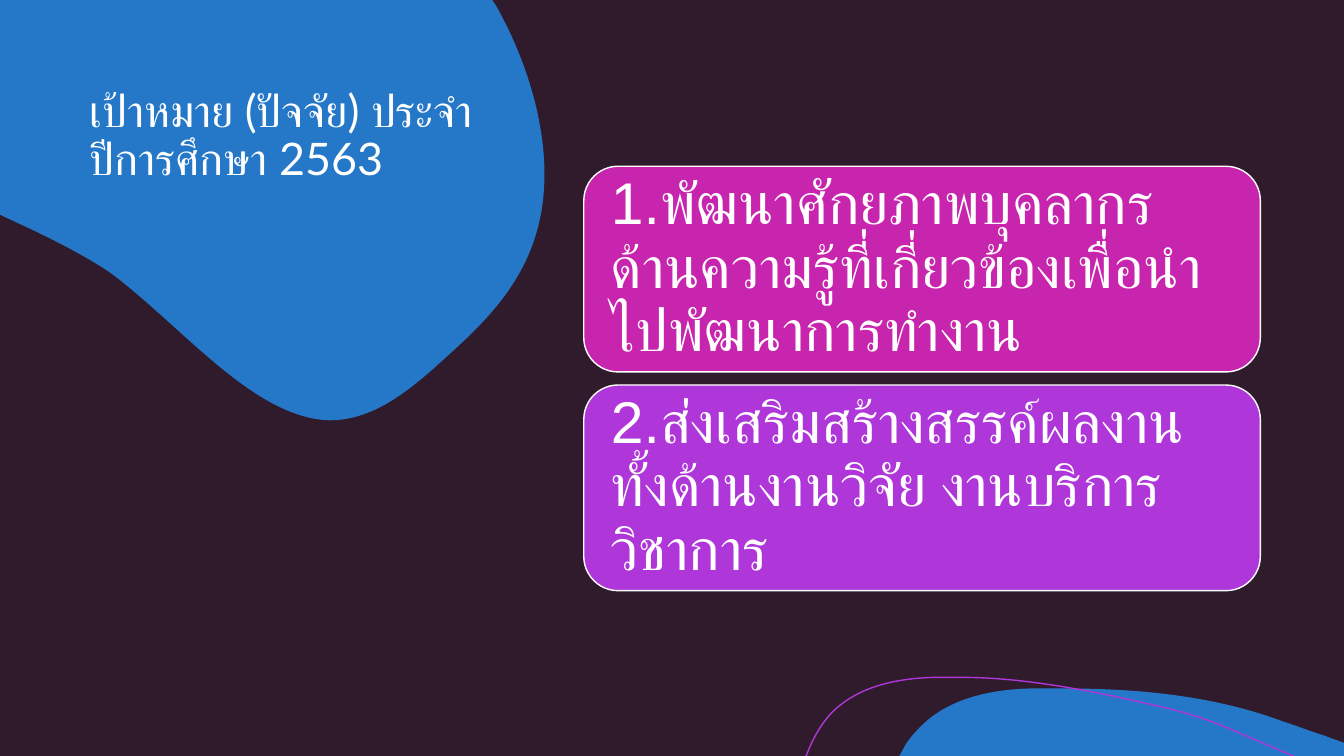
from lxml import etree
from pptx import Presentation
from pptx.dml.color import RGBColor
from pptx.enum.shapes import MSO_SHAPE
from pptx.enum.text import MSO_ANCHOR, PP_ALIGN
from pptx.oxml.ns import qn
from pptx.util import Inches, Pt

RECT, ROUND = MSO_SHAPE.RECTANGLE, MSO_SHAPE.ROUNDED_RECTANGLE
TOP, MIDDLE = MSO_ANCHOR.TOP, MSO_ANCHOR.MIDDLE
LEFT = PP_ALIGN.LEFT

# Content
WIDE, HIGH = 13.33, 7.5
COLORS = {"back": "301B2C", "blue": "2577C7", "pink": "C725AD",
          "violet": "AF37D9", "white": "FFFFFF"}
TITLE = "เป้าหมาย (ปัจจัย) ประจำปีการศึกษา 2563"
GOALS = [
    ("1.พัฒนาศักยภาพบุคลากร ด้านความรู้ที่เกี่ยวข้องเพื่อนำไปพัฒนาการทำงาน", "pink"),
    ("2.ส่งเสริมสร้างสรรค์ผลงาน ทั้งด้านงานวิจัย งานบริการวิชาการ", "violet"),
]

# Outlines: a start point, then lines (2 numbers) and Bezier curves (6 numbers)
CORNER = [
    (0, 0), (4.88, 0), (4.91, 0.04),
    (5.23, 0.6, 5.45, 1.31, 5.39, 1.94),
    (5.32, 2.7, 4.86, 3.15, 4.44, 3.53),
    (4.09, 3.85, 3.72, 4.17, 3.27, 4.17),
    (2.52, 4.15, 1.82, 3.25, 1.1, 2.71),
    (0.88, 2.56, 0.61, 2.42, 0.32, 2.28), (0, 2.13), (0, 0),
]
HILL = [
    (10.54, 6.83), (11.28, 6.83, 12.04, 6.9, 12.73, 7.16),
    (12.86, 7.2, 12.98, 7.25, 13.11, 7.29),
    (13.33, 7.37), (WIDE, HIGH), (8.92, HIGH), (8.98, 7.39),
    (9.02, 7.33, 9.06, 7.28, 9.11, 7.23),
    (9.39, 6.93, 9.82, 6.84, 10.23, 6.83),
    (10.33, 6.83, 10.43, 6.83, 10.54, 6.83),
]
ARC = [
    (7.99, 7.5), (8, 7.49), (8.06, 7.33, 8.14, 7.19, 8.24, 7.08),
    (8.5, 6.81, 8.89, 6.73, 9.26, 6.72), (9.55, 6.72),
    (10.22, 6.72, 11, 6.89, 11.55, 7.02),
    (12.09, 7.15, 12.26, 7.27, 12.83, 7.5),
]

# Card column
CARD_X, CARD_Y, CARD_W, CARD_H, PITCH = 5.79, 1.65, 6.71, 2.04, 2.17


def color(name):
    return RGBColor.from_string(COLORS[name])


def paint(shape, fill=None, line=None):
    shape.shadow.inherit = False
    if fill:
        shape.fill.solid()
        shape.fill.fore_color.rgb = color(fill)
    else:
        shape.fill.background()
    if line:
        shape.line.color.rgb = color(line)
        shape.line.width = Pt(1)
    else:
        shape.line.fill.background()


def add_curve(slide, parts, fill=None, line=None):
    ends = [(Inches(part[-2]), Inches(part[-1])) for part in parts]
    pen = slide.shapes.build_freeform(*ends[0], scale=1.0)
    pen.add_line_segments(ends[1:], close=fill is not None)
    shape = pen.convert_to_shape()
    # Bend the segments that have control points
    edges = list(shape.element.iter(qn("a:lnTo")))
    for edge, part in zip(edges, parts[1:]):
        if len(part) == 6:
            edge.tag = qn("a:cubicBezTo")
            for spot in (0, 1):
                x, y = part[2 * spot:2 * spot + 2]
                knot = etree.Element(qn("a:pt"), x=str(Inches(x) - shape.left),
                                     y=str(Inches(y) - shape.top))
                edge.insert(spot, knot)
    paint(shape, fill, line)


def write(shape, text, font, size, anchor, inset):
    frame = shape.text_frame
    frame.word_wrap = True
    frame.vertical_anchor = anchor
    frame.margin_left = frame.margin_right = Inches(inset[0])
    frame.margin_top = frame.margin_bottom = Inches(inset[1])
    para = frame.paragraphs[0]
    para.text = text
    para.alignment = LEFT
    para.line_spacing = 0.9
    para.font.name = font
    para.font.size = Pt(size)
    para.font.color.rgb = color("white")


def main():
    deck = Presentation()
    deck.slide_width, deck.slide_height = Inches(WIDE), Inches(HIGH)
    slide = deck.slides.add_slide(deck.slide_layouts[6])

    # Backdrop
    slide.background.fill.solid()
    slide.background.fill.fore_color.rgb = color("back")
    panel = slide.shapes.add_shape(RECT, 0, 0, Inches(WIDE), Inches(HIGH))
    paint(panel, "back")

    # Title on the corner blob
    add_curve(slide, CORNER, fill="blue")
    box = slide.shapes.add_textbox(Inches(0.79), Inches(0.83),
                                   Inches(4.21), Inches(2.5))
    write(box, TITLE, "Lato", 32, TOP, (0.1, 0.05))

    # Bottom waves
    add_curve(slide, HILL, fill="blue")
    add_curve(slide, ARC, line="violet")

    # Goal cards
    for row, (text, fill) in enumerate(GOALS):
        card = slide.shapes.add_shape(
            ROUND, Inches(CARD_X), Inches(CARD_Y + row * PITCH),
            Inches(CARD_W), Inches(CARD_H))
        paint(card, fill, "white")
        write(card, text, "Arial", 42, MIDDLE, (0.17, 0.17))

    deck.save("out.pptx")


if __name__ == "__main__":
    main()
